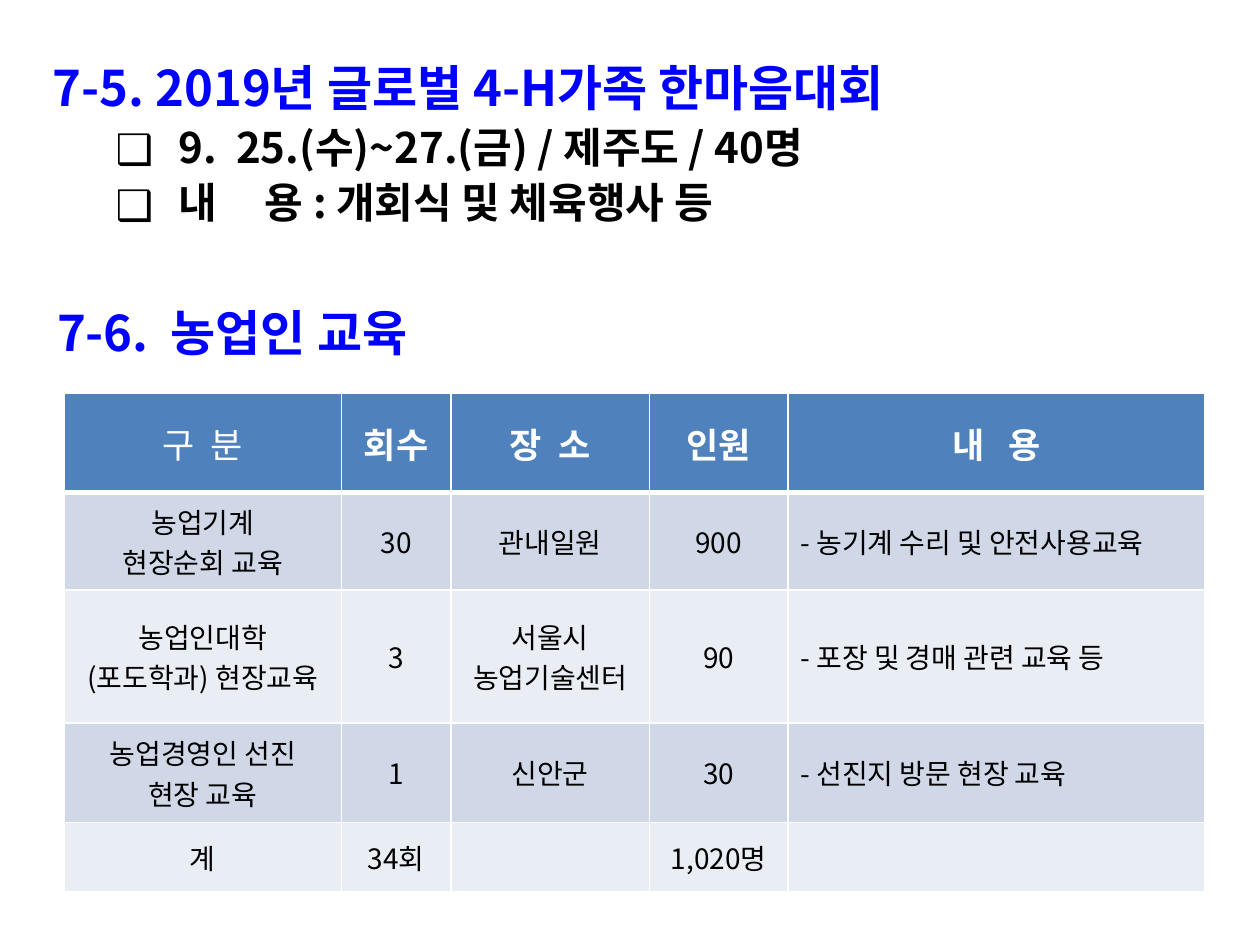
from lxml.etree import SubElement
from pptx import Presentation
from pptx.dml.color import RGBColor
from pptx.enum.text import MSO_ANCHOR as Anchor, PP_ALIGN as Align
from pptx.oxml.ns import qn
from pptx.util import Pt

FONT = "Noto Sans CJK KR"
BLUE, BLACK, WHITE = "0000FF", "000000", "FFFFFF"
HEADER_FILL, BANDS = "4F81BD", ("D0D8E8", "E9EDF4")

COLUMN_WIDTHS = (158.4, 62.6, 113.4, 79.2, 238.3)
ROW_HEIGHTS = (57, 55.5, 76, 57, 39.6)
TRAINING = (
    ("구  분", "회수", "장  소", "인원", "내   용"),
    ("농업기계\n현장순회 교육", "30", "관내일원", "900", " 농기계 수리 및 안전사용교육"),
    ("농업인대학\n(포도학과) 현장교육", "3", "서울시\n농업기술센터", "90", " 포장 및 경매 관련 교육 등"),
    ("농업경영인 선진\n현장 교육", "1", "신안군", "30", " 선진지 방문 현장 교육"),
    ("계", "34회", "", "1,020명", ""),
)


def color(hex_code):
    return RGBColor.from_string(hex_code)


def write(paragraph, text, size=16, ink=BLACK, bold=False, align=Align.LEFT,
          spacing=None, margin=0, hanging=0, bullet=None):
    paragraph.alignment = align
    if spacing:
        paragraph.line_spacing = spacing
    props = paragraph._p.get_or_add_pPr()
    props.set("marL", str(Pt(margin)))
    props.set("indent", str(Pt(-hanging)))
    if bullet:
        bullet_color = SubElement(props, qn("a:buClr"))
        SubElement(bullet_color, qn("a:srgbClr"), val=ink)
        SubElement(props, qn("a:buFont"), typeface=FONT)
        SubElement(props, qn("a:buChar"), char=bullet)
    run = paragraph.add_run()
    run.text = text
    font = run.font
    font.size, font.bold, font.name = Pt(size), bold, FONT
    font.color.rgb = color(ink)
    SubElement(run._r.get_or_add_rPr(), qn("a:ea"), typeface=FONT)


def add_text_frame(slide, left, top, width, height, wrap=True):
    frame = slide.shapes.add_textbox(Pt(left), Pt(top), Pt(width), Pt(height)).text_frame
    frame.word_wrap = wrap
    return frame


def write_heading(frame, text, spacing):
    write(frame.paragraphs[0], text, size=28, ink=BLUE, bold=True,
          spacing=spacing, margin=41.75, hanging=41.75)


def set_borders(cell, top, bottom):
    props = cell._tc.get_or_add_tcPr()
    for side, width in (("L", 1), ("R", 1), ("T", top), ("B", bottom)):
        border = SubElement(props, qn(f"a:ln{side}"), w=str(Pt(width)))
        fill = SubElement(border, qn("a:solidFill"))
        SubElement(fill, qn("a:srgbClr"), val=WHITE)


def fill_cell(cell, text, row, column):
    is_header = row == 0
    set_borders(cell, top=3 if row == 1 else 1, bottom=3 if is_header else 1)
    cell.fill.solid()
    cell.fill.fore_color.rgb = color(HEADER_FILL if is_header else BANDS[(row - 1) % 2])
    cell.vertical_anchor = Anchor.MIDDLE
    if is_header:
        style = dict(size=20, ink=WHITE, bold=column > 0, align=Align.CENTER)
    elif column == len(COLUMN_WIDTHS) - 1:
        style = dict(bullet="-")
    else:
        style = dict(align=Align.CENTER)
    if text:
        frame = cell.text_frame
        for index, line in enumerate(text.split("\n")):
            write(frame.add_paragraph() if index else frame.paragraphs[0], line, **style)


def add_training_table(slide, left, top):
    table = slide.shapes.add_table(
        len(ROW_HEIGHTS), len(COLUMN_WIDTHS), Pt(left), Pt(top),
        Pt(sum(COLUMN_WIDTHS)), Pt(sum(ROW_HEIGHTS))).table
    for column, width in zip(table.columns, COLUMN_WIDTHS):
        column.width = Pt(width)
    for row, height in zip(table.rows, ROW_HEIGHTS):
        row.height = Pt(height)
    for row, texts in enumerate(TRAINING):
        for column, text in enumerate(texts):
            fill_cell(table.cell(row, column), text, row, column)


def main():
    deck = Presentation()
    deck.slide_width, deck.slide_height = Pt(720), Pt(540)
    slide = deck.slides.add_slide(deck.slide_layouts[6])

    training = add_text_frame(slide, 25.5, 162.5, 680.5, 47, wrap=False)
    write_heading(training, "7-6.  농업인 교육", spacing=1.2)
    add_training_table(slide, 36.7, 224.6)

    festival = add_text_frame(slide, 23, 26, 680.5, 109)
    write_heading(festival, "7-5. 2019년 글로벌 4-H가족 한마음대회", spacing=1.1)
    for detail in ("9.  25.(수)~27.(금) / 제주도 / 40명",
                   "내     용 : 개회식 및 체육행사 등"):
        paragraph = festival.add_paragraph()
        paragraph.level = 1
        write(paragraph, detail, size=24, bold=True, spacing=1.1,
              margin=72, hanging=36, bullet="❑")

    deck.save("out.pptx")


if __name__ == "__main__":
    main()
